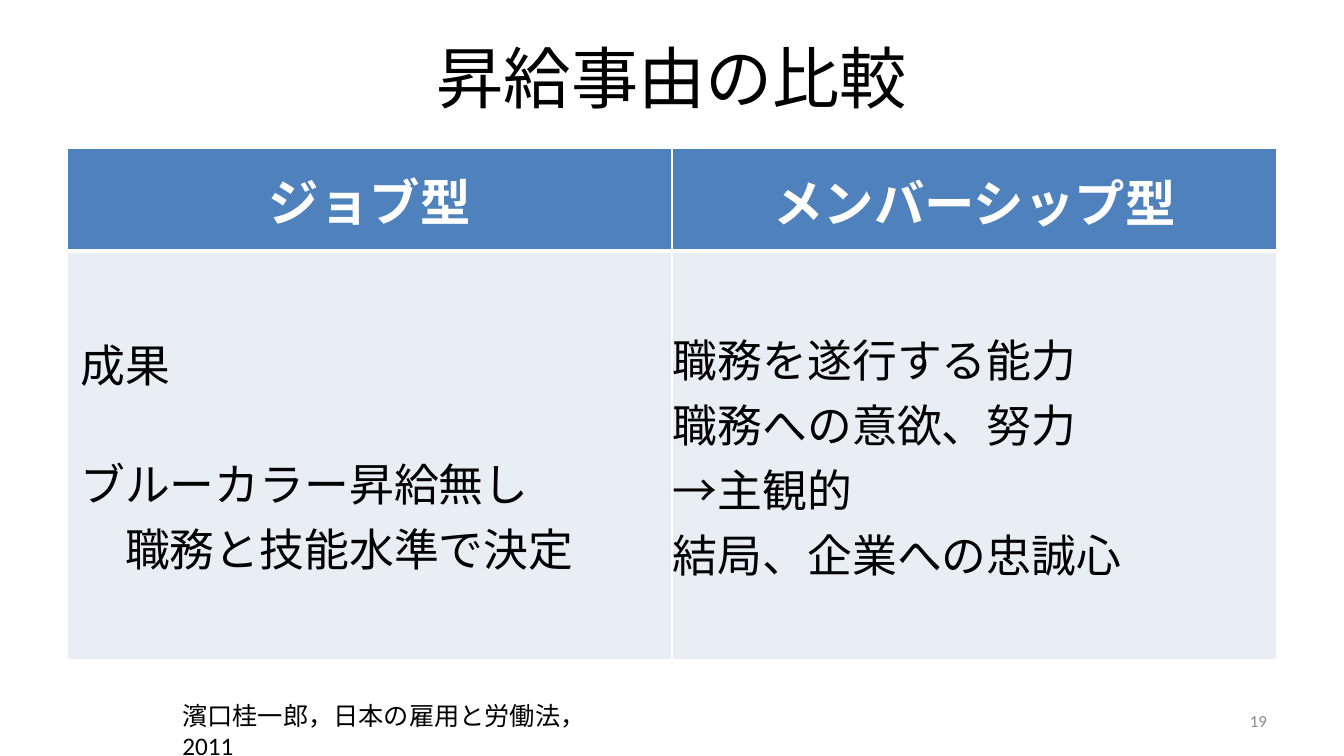
from dataclasses import dataclass

from lxml.etree import SubElement
from pptx import Presentation
from pptx.dml.color import RGBColor
from pptx.enum.lang import MSO_LANGUAGE_ID
from pptx.enum.text import MSO_ANCHOR, PP_ALIGN
from pptx.oxml.ns import qn
from pptx.util import Inches, Pt

WIDE, HIGH = 13.33, 7.5
LEFT, SPAN = 0.05 * WIDE, 0.9 * WIDE
ROWS = (1.02, 4.05)
ROOMY = (0.13, 0.05, 0.13, 0.05)
TIGHT = (0.01, 0.01, 0.01, 0)


@dataclass(frozen=True)
class Theme:
    ink: str = "000000"
    white: str = "FFFFFF"
    grey: str = "898989"
    head: str = "4F81BD"
    body: str = "E9EDF4"
    title: int = 48
    top: int = 36
    text: int = 32
    note: int = 18
    page: int = 12
    main: str = "Calibri"
    alt: str = "Arial"


THEME = Theme()


def write(frame, lines, size, color, font=THEME.main, bold=False, align=PP_ALIGN.LEFT):
    frame.text = "\n".join(lines)
    frame.word_wrap = True
    for para in frame.paragraphs:
        para.alignment = align
        for run in para.runs:
            run.font.size = Pt(size)
            run.font.name = font
            run.font.bold = bold
            run.font.color.rgb = RGBColor.from_string(color)
            run.font.language_id = MSO_LANGUAGE_ID.JAPANESE


def place(shape, left, top, width, height):
    shape.left, shape.top = Inches(left), Inches(top)
    shape.width, shape.height = Inches(width), Inches(height)


def edge(cell, row):
    """Draw white cell borders, thick between the head and body rows."""
    props = cell._tc.get_or_add_tcPr()
    thick = "lnB" if row == 0 else "lnT"
    for at, side in enumerate(("lnL", "lnR", "lnT", "lnB")):
        width = Pt(3 if side == thick else 1)
        line = SubElement(props, qn(f"a:{side}"), w=str(width))
        fill = SubElement(line, qn("a:solidFill"))
        SubElement(fill, qn("a:srgbClr"), val=THEME.white)
        props.remove(line)
        props.insert(at, line)


def fill_cell(cell, row, lines, inset, font):
    head = row == 0
    cell.fill.solid()
    cell.fill.fore_color.rgb = RGBColor.from_string(THEME.head if head else THEME.body)
    edge(cell, row)
    cell.vertical_anchor = MSO_ANCHOR.MIDDLE
    (cell.margin_left, cell.margin_top,
     cell.margin_right, cell.margin_bottom) = map(Inches, inset)
    if head:
        write(cell.text_frame, lines, THEME.top, THEME.white, font, True, PP_ALIGN.CENTER)
    else:
        write(cell.text_frame, lines, THEME.text, THEME.ink, font)


def add_grid(slide, cells):
    count = len(cells[0])
    frame = slide.shapes.add_table(
        len(cells), count, Inches(LEFT), Inches(1.47), Inches(SPAN), Inches(sum(ROWS)))
    table = frame.table
    for col in table.columns:
        col.width = Inches(SPAN / count)
    for row, line in enumerate(cells):
        table.rows[row].height = Inches(ROWS[row])
        for col, (lines, inset, font) in enumerate(line):
            fill_cell(table.cell(row, col), row, lines, inset, font)
    return table


def add_title(slide, text):
    title = slide.shapes.title
    place(title, LEFT, 0.04 * HIGH, SPAN, 0.93)
    write(title.text_frame, [text], THEME.title, THEME.ink, align=PP_ALIGN.CENTER)
    title.text_frame.vertical_anchor = MSO_ANCHOR.MIDDLE


def add_note(slide, text, box, size, color, align=PP_ALIGN.LEFT, anchor=MSO_ANCHOR.TOP):
    note = slide.shapes.add_textbox(*map(Inches, box))
    write(note.text_frame, [text], size, color, align=align)
    note.text_frame.vertical_anchor = anchor


def main():
    deck = Presentation()
    deck.slide_width, deck.slide_height = Inches(WIDE), Inches(HIGH)
    slide = deck.slides.add_slide(deck.slide_layouts[5])
    add_title(slide, "昇給事由の比較")
    table = add_grid(slide, [
        [(["ジョブ型"], ROOMY, THEME.main), (["メンバーシップ型"], TIGHT, THEME.main)],
        [(["成果", "ブルーカラー昇給無し", "　職務と技能水準で決定"], ROOMY, THEME.main),
         (["職務を遂行する能力", "職務への意欲、努力", "→主観的",
           "結局、企業への忠誠心"], TIGHT, THEME.alt)],
    ])
    table.cell(1, 0).text_frame.paragraphs[0].space_after = Pt(39)
    add_note(slide, "19", (LEFT + SPAN - 3.11, 6.95, 3.11, 0.4), THEME.page,
             THEME.grey, PP_ALIGN.RIGHT, MSO_ANCHOR.MIDDLE)
    add_note(slide, "濱口桂一郎，日本の雇用と労働法，2011",
             (1.71, 0.92 * HIGH, 4.53, 0.4), THEME.note, THEME.ink)
    deck.save("out.pptx")


if __name__ == "__main__":
    main()
